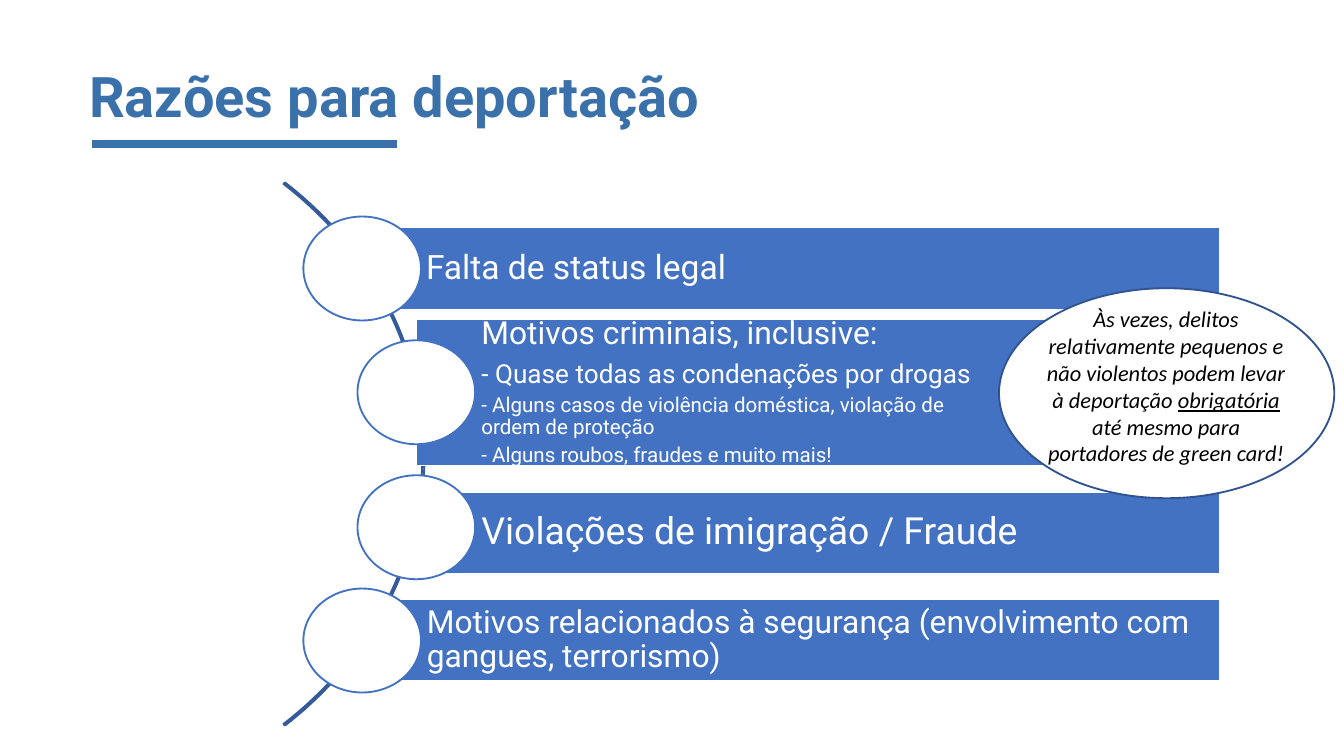
from lxml import etree
from pptx import Presentation
from pptx.dml.color import RGBColor
from pptx.enum.shapes import MSO_CONNECTOR, MSO_SHAPE
from pptx.enum.text import MSO_ANCHOR, PP_ALIGN
from pptx.oxml.ns import qn
from pptx.util import Pt

RECTANGLE, OVAL, ARC = MSO_SHAPE.RECTANGLE, MSO_SHAPE.OVAL, MSO_SHAPE.BLOCK_ARC
LEFT, CENTER = PP_ALIGN.LEFT, PP_ALIGN.CENTER
MIDDLE, TOP = MSO_ANCHOR.MIDDLE, MSO_ANCHOR.TOP

COLORS = {name: RGBColor.from_string(value) for name, value in {
    "title": "3A71AB", "bar": "4372C3", "arc": "345A99",
    "callout": "31538F", "white": "FFFFFF", "black": "000000",
}.items()}


def add_outlined(kind, box, fill, line):
    """Add a shape with a 1 pt outline; a fill of None leaves it see-through."""
    shape = slide.shapes.add_shape(kind, *map(Pt, box))
    shape.shadow.inherit = False
    if fill:
        shape.fill.solid()
        shape.fill.fore_color.rgb = COLORS[fill]
    else:
        shape.fill.background()
    shape.line.color.rgb = COLORS[line]
    shape.line.width = Pt(1)
    return shape


def format_frame(frame, anchor, left, top, right, bottom):
    values = {"word_wrap": True, "vertical_anchor": anchor,
              "margin_left": Pt(left), "margin_top": Pt(top),
              "margin_right": Pt(right), "margin_bottom": Pt(bottom)}
    for name, value in values.items():
        setattr(frame, name, value)


prs = Presentation()
prs.slide_width, prs.slide_height = Pt(720), Pt(405)
slide = prs.slides.add_slide(prs.slide_layouts[5])

# Title and its underline
title = slide.shapes.title
title.left, title.top, title.width, title.height = map(Pt, (42.5, 33, 417, 40.5))
format_frame(title.text_frame, MIDDLE, 5.3, 2.6, 5.3, 2.6)
heading = title.text_frame.paragraphs[0]
heading.text = "Razões para deportação"
heading.alignment = LEFT
heading.line_spacing = 0.9
for name, value in {"name": "Roboto", "size": Pt(30), "bold": True}.items():
    setattr(heading.font, name, value)
heading.font.color.rgb = COLORS["title"]

underline = slide.shapes.add_connector(
    MSO_CONNECTOR.STRAIGHT, Pt(49.5), Pt(77.3), Pt(212.5), Pt(77.3))
underline.line.color.rgb = COLORS["title"]
underline.line.width = Pt(4.5)
etree.SubElement(underline.element.spPr, qn("a:effectLst"))

# Curve that links the reasons
curve = add_outlined(ARC, (-213, 49.5, 440.5, 387.5), None, "arc")
for index, value in enumerate((189, 27, 0.003)):
    curve.adjustments[index] = value

# Reasons: bar left, top, height, circle left, top, lines of (text, size, space before)
BAR_RIGHT = 653.5
reasons = [
    (193, 121.9, 43.9, 162.5, 116, [("Falta de status legal", 18, 0)]),
    (222.7, 170.9, 78.5, 191.5, 182.3, [
        ("Motivos criminais, inclusive:", 17, 0),
        ("- Quase todas as condenações por drogas", 14, 5),
        ("- Alguns casos de violência doméstica, violação de\vordem de proteção", 11, 3),
        ("- Alguns roubos, fraudes e muito mais!", 11, 3),
    ]),
    (222.7, 263.5, 43.9, 191.5, 254.6, [("Violações de imigração / Fraude", 20, 0)]),
    (193.5, 321, 43.9, 162.5, 315.3, [
        ("Motivos relacionados à segurança (envolvimento com gangues, terrorismo)", 17, 0)]),
]
for left, top, height, circle_left, circle_top, lines in reasons:
    bar = add_outlined(RECTANGLE, (left, top, BAR_RIGHT - left, height), "bar", "white")
    frame = bar.text_frame
    format_frame(frame, MIDDLE, 35.2, 3.2, 3.2, 3.2)
    for number, (text, size, space) in enumerate(lines):
        line = frame.add_paragraph() if number else frame.paragraphs[0]
        line.text = text
        line.alignment = LEFT
        line.line_spacing = 0.9
        line.space_before = Pt(space)
        line.font.name = "Roboto"
        line.font.size = Pt(size)
        line.font.color.rgb = COLORS["white"]
    add_outlined(OVAL, (circle_left, circle_top, 63, 55.7), "white", "bar")

# Callout
add_outlined(OVAL, (535.2, 154.4, 179.6, 112.5), "white", "callout")
remark = slide.shapes.add_textbox(Pt(553.2), Pt(160), Pt(143), Pt(94.5))
format_frame(remark.text_frame, TOP, 7.2, 3.6, 7.2, 3.6)
sentence = remark.text_frame.paragraphs[0]
sentence.alignment = CENTER
for text, underlined in [
    ("Às vezes, delitos relativamente pequenos e não violentos podem levar à deportação ", False),
    ("obrigatória", True),
    (" até mesmo para portadores de green card!", False),
]:
    run = sentence.add_run()
    run.text = text
    for name, value in {"name": "Calibri", "size": Pt(12), "italic": True,
                        "underline": underlined}.items():
        setattr(run.font, name, value)
    run.font.color.rgb = COLORS["black"]

prs.save("out.pptx")
